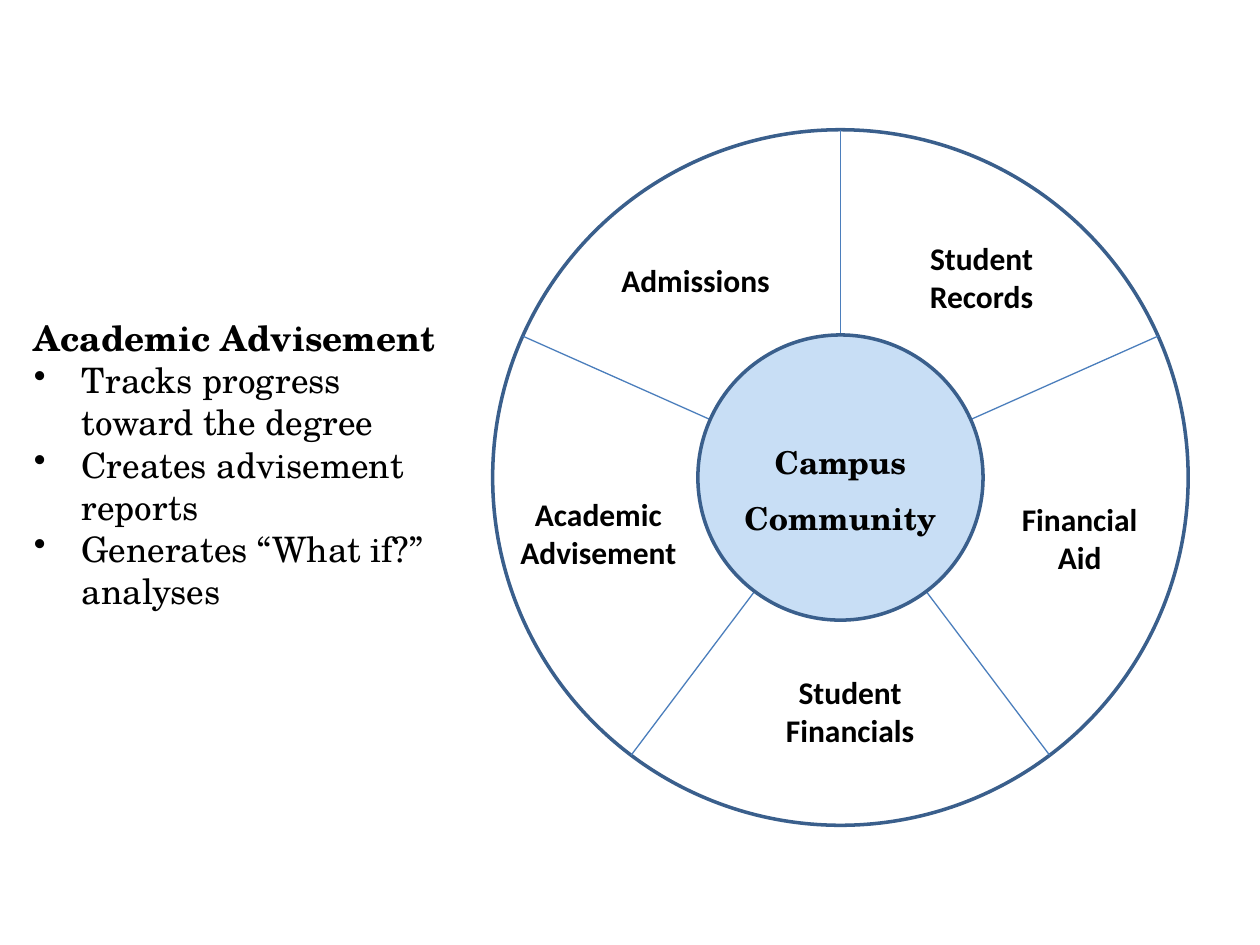
from math import cos, radians, sin

from lxml.etree import SubElement
from pptx import Presentation
from pptx.dml.color import RGBColor as RGB
from pptx.enum.shapes import MSO_CONNECTOR as LINE, MSO_SHAPE as SHAPE
from pptx.enum.text import PP_ALIGN as ALIGN
from pptx.oxml.ns import qn
from pptx.util import Inches, Pt

INK = {"text": "000000", "rim": "3A5F8C", "spoke": "4B7EBC",
       "wheel": "FFFFFF", "hub": "C8DEF5"}
SERIF, SANS = "TeX Gyre Schola", "Calibri"
SPOKES = [0, 66, 143, 217, 294]
LABELS = [("Admissions", 30.3, 21.6, 0.4, ALIGN.LEFT),
          ("Student Records", 70.3, 21.3, 0.71, ALIGN.CENTER),
          ("Financial Aid", 84.4, 58.8, 0.71, ALIGN.CENTER),
          ("Student Financials", 51.4, 83.6, 0.71, ALIGN.CENTER),
          ("Academic Advisement", 15.2, 58.1, 0.71, ALIGN.CENTER)]
POINTS = ["Tracks progress toward the degree", "Creates advisement reports",
          "Generates “What if?” analyses"]


def tint(name):
    """Return a named colour."""
    return RGB.from_string(INK[name])


def style(para, face, size, bold=True):
    """Set the font of one paragraph."""
    font = para.font
    font.name, font.size, font.bold = face, Pt(size), bold
    font.color.rgb = tint("text")


def text(shapes, box, words, face, size, align=ALIGN.LEFT, space=None):
    """Add a wrapped bold text box and return its frame."""
    frame = shapes.add_textbox(*map(Inches, box)).text_frame
    frame.word_wrap = True
    para = frame.paragraphs[0]
    para.text, para.alignment = words, align
    if space:
        para.line_spacing = space
    style(para, face, size)
    return frame


def disc(shapes, x, y, size, fill):
    """Add a rimmed circle centred on a point."""
    box = x - size / 2, y - size / 2, size, size
    shape = shapes.add_shape(SHAPE.OVAL, *map(Inches, box))
    shape.shadow.inherit = False
    shape.fill.solid()
    shape.fill.fore_color.rgb = tint(fill)
    shape.line.color.rgb = tint("rim")
    shape.line.width = Pt(2)


def spoke(shapes, x, y, reach, angle):
    """Draw a line from the rim to the centre, clockwise from the top."""
    turn = radians(angle)
    ends = x + reach * sin(turn), y - reach * cos(turn), x, y
    line = shapes.add_connector(LINE.STRAIGHT, *map(Inches, ends))
    line.line.color.rgb = tint("spoke")
    line.line.width = Pt(0.75)
    SubElement(line._element.spPr, qn("a:effectLst"))


def hub(shapes, x, y, size):
    """Group the inner circle with its title."""
    parts = shapes.add_group_shape().shapes
    disc(parts, x, y, size, "hub")
    wide, high = size * 0.9, size * 0.42
    text(parts, (x - wide / 2, y - high / 2, wide, high),
         "Campus Community", SERIF, 18, ALIGN.CENTER, 1.5)


def wheel(shapes, left, top, size):
    """Draw the wheel of modules in a square box."""
    x, y = left + size / 2, top + size / 2
    disc(shapes, x, y, size, "wheel")
    for angle in SPOKES:
        spoke(shapes, x, y, size / 2, angle)
    hub(shapes, x, y, size * 0.41)
    wide = 1.5
    for words, across, down, high, align in LABELS:
        box = (left + size * across / 100 - wide / 2,
               top + size * down / 100 - high / 2, wide, high)
        text(shapes, box, words, SANS, 18, align)


def notes(shapes, *box):
    """Write the heading and its bullet points."""
    frame = text(shapes, box, "Academic Advisement", SERIF, 20, space=1.5)
    for words in POINTS:
        para = frame.add_paragraph()
        para.text = words
        props = para._p.get_or_add_pPr()
        props.set("marL", str(Inches(0.38)))
        props.set("indent", str(-Inches(0.38)))
        SubElement(props, qn("a:buChar")).set("char", "•")
        style(para, SERIF, 20, False)


def main():
    """Build and save the slide."""
    deck = Presentation()
    deck.slide_width, deck.slide_height = Inches(10), Inches(7.5)
    shapes = deck.slides.add_slide(deck.slide_layouts[6]).shapes
    wheel(shapes, 3.91, 1.03, 5.52)
    notes(shapes, 0.17, 2.3, 3.42, 2.63)
    deck.save("out.pptx")


if __name__ == "__main__":
    main()
